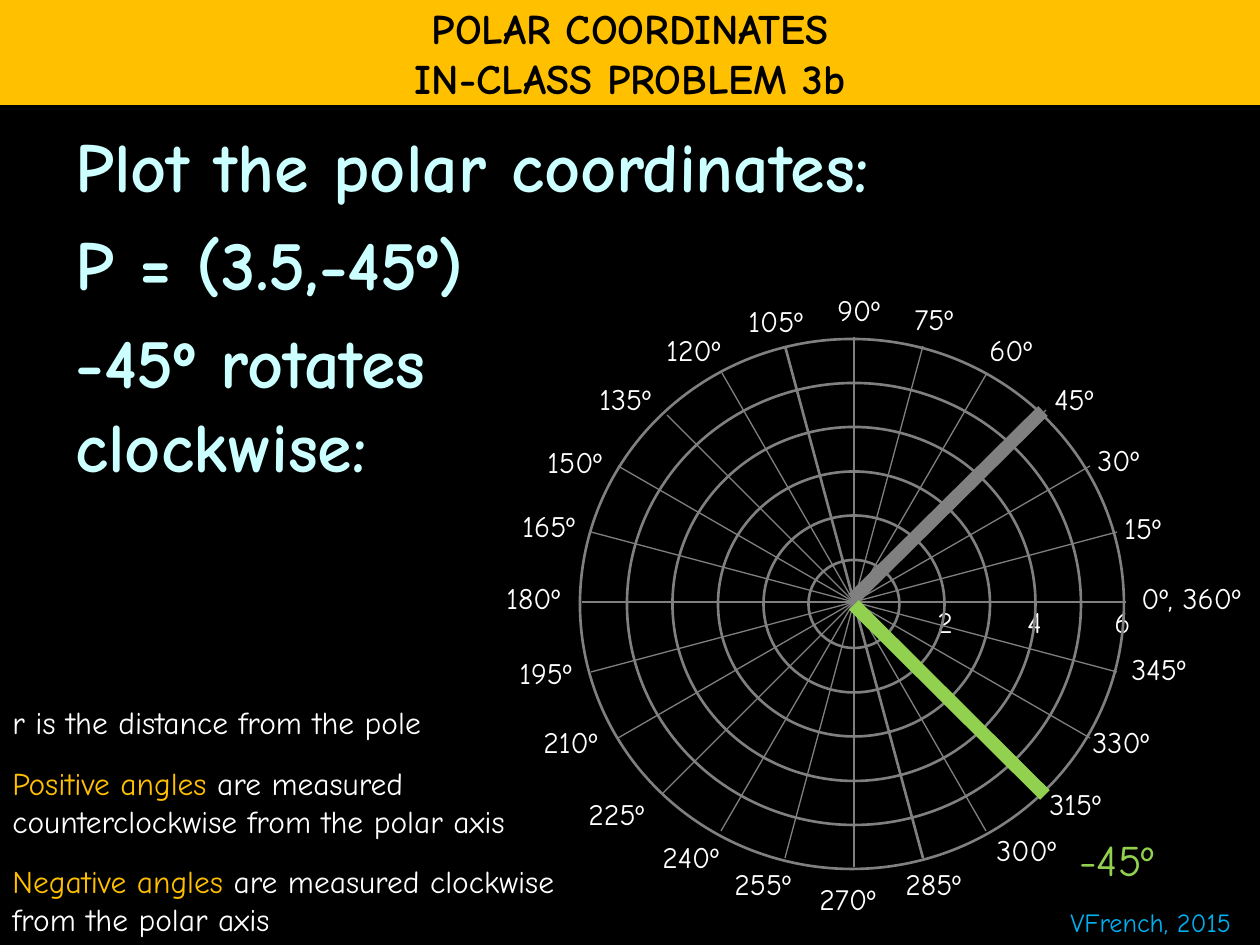
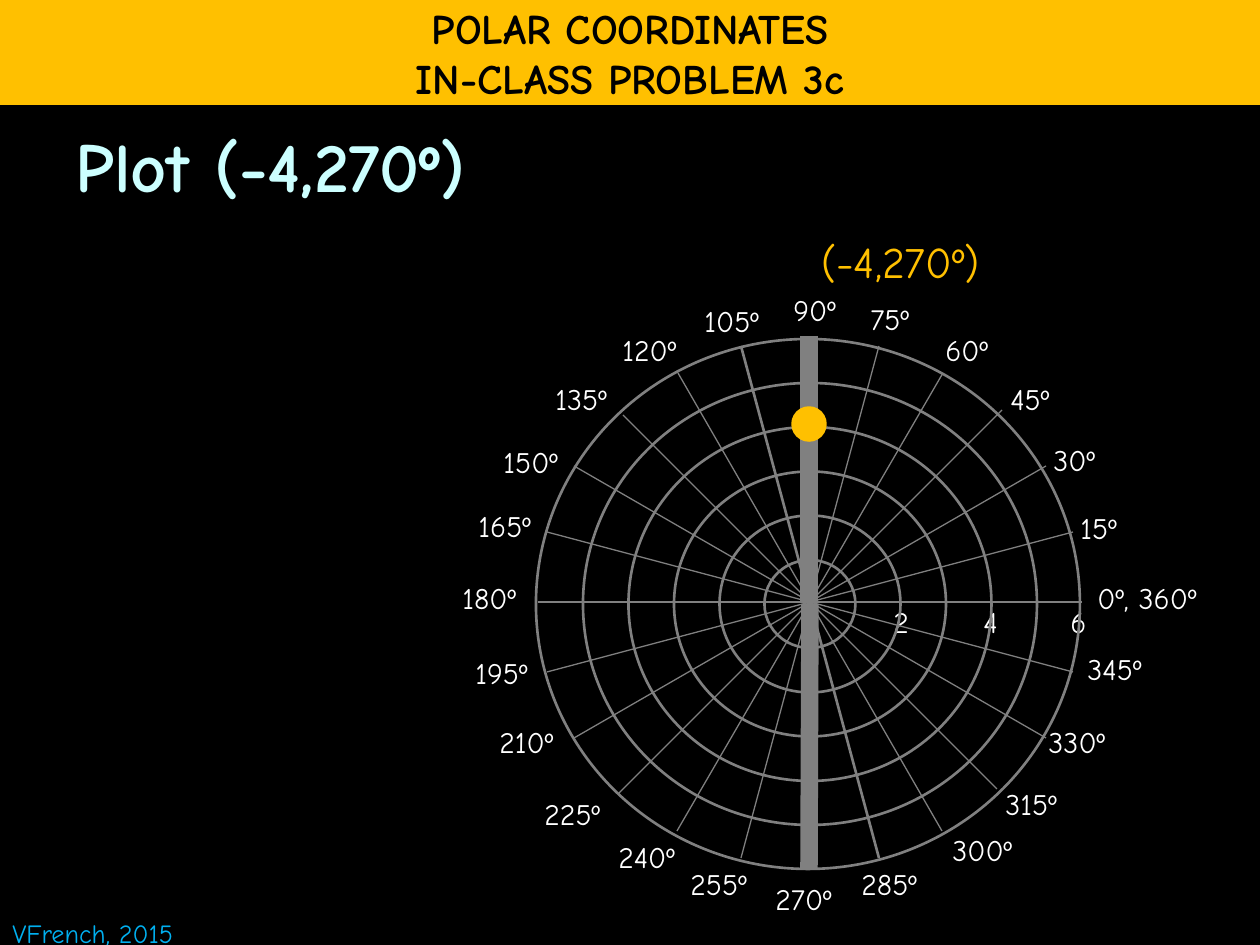
from math import cos, radians, sin

from lxml import etree
from pptx import Presentation
from pptx.dml.color import RGBColor
from pptx.enum.shapes import MSO_CONNECTOR, MSO_SHAPE
from pptx.enum.text import MSO_ANCHOR, MSO_AUTO_SIZE, PP_ALIGN
from pptx.oxml.ns import qn
from pptx.util import Pt

OVAL = MSO_SHAPE.OVAL
STRAIGHT = MSO_CONNECTOR.STRAIGHT
MIDDLE, TOP = MSO_ANCHOR.MIDDLE, MSO_ANCHOR.TOP
NO_FIT, GROW = MSO_AUTO_SIZE.NONE, MSO_AUTO_SIZE.SHAPE_TO_FIT_TEXT
CENTER, LEFT = PP_ALIGN.CENTER, PP_ALIGN.LEFT

FONT = "Comic Neue"
COLORS = {
    "black": "000000",
    "white": "FFFFFF",
    "gold": "FFC000",
    "ice": "CCFFFF",
    "gray": "808080",
    "green": "92D050",
    "blue": "00B0F0",
}
CREDIT = "VFrench, 2015"

NOTES = [
    [("r is the distance from the pole", "white")],
    [("Positive angles", "gold"), (" are measured counterclockwise from the polar axis", "white")],
    [("Negative angles", "gold"), (" are measured clockwise from the polar axis", "white")],
]

GRID_LABELS = [
    ("0º, 360º", 275, -28, 144), ("15º", 258, -98, 70), ("30º", 231, -166, 76),
    ("45º", 188, -227, 76), ("60º", 123, -276, 76), ("75º", 48, -307, 76),
    ("90º", -29, -316, 76), ("105º", -118, -305, 89), ("120º", -200, -276, 89),
    ("135º", -267, -227, 89), ("150º", -319, -164, 89), ("165º", -344, -100, 89),
    ("180º", -360, -28, 89), ("195º", -347, 47, 89), ("210º", -323, 116, 89),
    ("225º", -278, 188, 94), ("240º", -204, 231, 94), ("255º", -132, 258, 94),
    ("270º", -47, 273, 94), ("285º", 39, 258, 94), ("300º", 130, 224, 94),
    ("315º", 183, 178, 89), ("330º", 226, 116, 94), ("345º", 265, 43, 94),
    ("2", 71, -4, 44), ("4", 161, -4, 44), ("6", 248, -4, 44),
]

PROBLEMS = [
    {
        "number": "3b",
        "statement": [
            ("Plot the polar coordinates:", 8),
            ("P = (3.5,-45º)", 8),
            ("-45º rotates", 8),
            ("clockwise:", 0),
        ],
        "body_width": 1197,
        "pole_x": 854,
        "credit": (1058, 900, 213, 44),
        "notes": NOTES,
        "answer": ("-45º", (1067, 827, 117, 65), "green"),
        "rays": [((853, 599), (1043, 411), "gray"), ((854, 605), (1045, 795), "green")],
        "ray_width": 7.75,
        "point": None,
    },
    {
        "number": "3c",
        "statement": [("Plot (-4,270º)", 8)],
        "body_width": 1134,
        "pole_x": 810,
        "credit": (0, 911, 204, 44),
        "notes": [],
        "answer": ("(-4,270º)", (809, 229, 215, 65), "gold"),
        "rays": [((810, 604), (809, 869), "gray"), ((809, 336), (809, 601), "gray")],
        "ray_width": 10,
        "point": (793, 408, 32, 32),
    },
]

PX = 914400 / 126
POLE_Y = 602
RING_COUNT = 6
SPOKE_STEP = 15
HEAVY_SPOKE = 105


def px(*lengths):
    return [round(length * PX) for length in lengths]


def rgb(name):
    return RGBColor.from_string(COLORS[name])


def style_run(run, size, color, bold=False):
    run.font.name = FONT
    run.font.size = Pt(size)
    run.font.bold = bold
    run.font.color.rgb = rgb(color)


def place(shape, left, top, width, height):
    shape.left, shape.top, shape.width, shape.height = px(left, top, width, height)


def add_label(shapes, text, box, size, color):
    frame = shapes.add_textbox(*px(*box)).text_frame
    frame.text = text
    frame.word_wrap = False
    frame.auto_size = GROW
    style_run(frame.paragraphs[0].runs[0], size, color)


def add_line(shapes, start, end, color, width):
    line = shapes.add_connector(STRAIGHT, *px(*start, *end))
    line.line.color.rgb = rgb(color)
    line.line.width = Pt(width)
    etree.SubElement(line._element.spPr, qn("a:effectLst"))


def add_oval(shapes, box, line_color, line_width, fill=None):
    oval = shapes.add_shape(OVAL, *px(*box))
    oval.shadow.inherit = False
    oval.line.color.rgb = rgb(line_color)
    oval.line.width = Pt(line_width)
    if fill:
        oval.fill.solid()
        oval.fill.fore_color.rgb = rgb(fill)
    else:
        oval.fill.background()


def add_title(slide, number):
    title = slide.shapes.title
    place(title, 0, 0, 1260, 105)
    title.fill.solid()
    title.fill.fore_color.rgb = rgb("gold")
    frame = title.text_frame
    frame.text = f"POLAR COORDINATES\nIN-CLASS PROBLEM {number}"
    frame.word_wrap = False
    frame.auto_size = NO_FIT
    frame.vertical_anchor = MIDDLE
    for paragraph in frame.paragraphs:
        paragraph.alignment = CENTER
        style_run(paragraph.runs[0], 24, "black", True)


def add_statement(slide, lines, width):
    body = slide.placeholders[1]
    place(body, 63, 116, width, 777)
    frame = body.text_frame
    frame.text = "\n".join(text for text, _ in lines)
    frame.auto_size = NO_FIT
    frame.vertical_anchor = TOP
    for paragraph, (_, gap) in zip(frame.paragraphs, lines):
        paragraph.alignment = LEFT
        paragraph.space_before = Pt(gap)
        properties = paragraph._p.get_or_add_pPr()
        properties.set("marL", "0")
        properties.set("indent", "0")
        etree.SubElement(properties, qn("a:buNone"))
        style_run(paragraph.runs[0], 40, "ice", True)


def add_notes(slide, notes):
    frame = slide.shapes.add_textbox(*px(0, 697, 635, 248)).text_frame
    frame.word_wrap = True
    frame.auto_size = GROW
    for index, note in enumerate(notes):
        paragraph = frame.add_paragraph() if index else frame.paragraphs[0]
        paragraph.space_before = Pt(13 if index else 0)
        for text, color in note:
            run = paragraph.add_run()
            run.text = text
            style_run(run, 18, color)


def add_polar_grid(slide, pole_x):
    grid = slide.shapes.add_group_shape().shapes
    for text, dx, dy, width in GRID_LABELS:
        add_label(grid, text, (pole_x + dx, POLE_Y + dy, width, 49), 17, "white")
    for angle in range(0, 180, SPOKE_STEP):
        radius = 272 if angle <= 45 or angle >= 150 else 265
        dx = round(radius * cos(radians(angle)))
        dy = round(radius * sin(radians(angle)))
        add_line(grid, (pole_x - dx, POLE_Y + dy), (pole_x + dx, POLE_Y - dy),
                 "gray", 1.5 if angle == HEAVY_SPOKE else 0.75)
    for ring in range(1, RING_COUNT + 1):
        width, height = round(90.7 * ring), round(88.4 * ring)
        center_x = pole_x - 2 if ring == RING_COUNT else pole_x
        add_oval(grid, (center_x - width / 2, POLE_Y + 2 - height / 2, width, height),
                 "gray", 1.5)


def add_problem(deck, problem):
    slide = deck.slides.add_slide(deck.slide_layouts[1])
    add_title(slide, problem["number"])
    add_statement(slide, problem["statement"], problem["body_width"])
    add_label(slide.shapes, CREDIT, problem["credit"], 15, "blue")
    if problem["notes"]:
        add_notes(slide, problem["notes"])
    add_polar_grid(slide, problem["pole_x"])
    answer, box, color = problem["answer"]
    add_label(slide.shapes, answer, box, 25, color)
    for start, end, ray_color in problem["rays"]:
        add_line(slide.shapes, start, end, ray_color, problem["ray_width"])
    if problem["point"]:
        add_oval(slide.shapes, problem["point"], "gold", 2, "gold")


def main():
    deck = Presentation()
    deck.slide_width, deck.slide_height = px(1260, 945)
    background = deck.slide_master.background.fill
    background.solid()
    background.fore_color.rgb = rgb("black")
    for problem in PROBLEMS:
        add_problem(deck, problem)
    deck.save("out.pptx")


if __name__ == "__main__":
    main()
